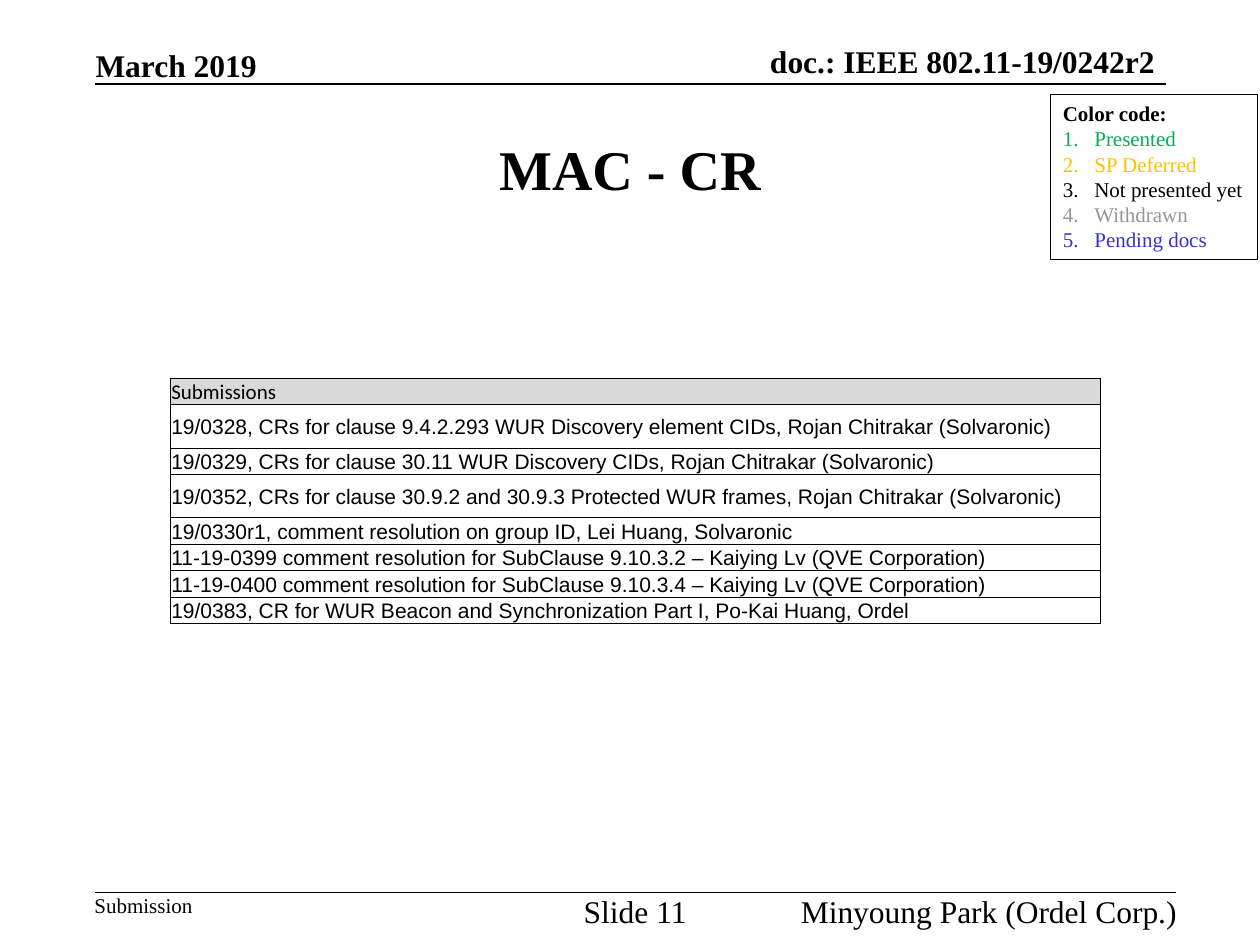
from dataclasses import dataclass

from lxml import etree
from pptx import Presentation
from pptx.dml.color import RGBColor
from pptx.enum.shapes import MSO_CONNECTOR, MSO_SHAPE
from pptx.enum.text import MSO_ANCHOR, PP_ALIGN
from pptx.oxml.ns import qn
from pptx.util import Emu, Inches, Pt

LEFT, MID, RIGHT = PP_ALIGN.LEFT, PP_ALIGN.CENTER, PP_ALIGN.RIGHT
TOP, CENTER, BASE = MSO_ANCHOR.TOP, MSO_ANCHOR.MIDDLE, MSO_ANCHOR.BOTTOM
LINE, RECT = MSO_CONNECTOR.STRAIGHT, MSO_SHAPE.RECTANGLE
SERIF, SANS, HEAD = "Times New Roman", "Arial", "Calibri"
COLORS = {
    "black": "000000", "green": "00B050", "amber": "FFC000",
    "gray": "969696", "blue": "3333CC", "head": "D9D9D9",
}
CELL = Inches(1) // 12  # the grid has 120 columns and 90 rows


@dataclass
class Label:
    text: str
    col: float
    row: float
    cols: float
    rows: float
    size: int = 18
    bold: bool = False
    align: PP_ALIGN = LEFT
    anchor: MSO_ANCHOR = TOP


@dataclass
class Rule:
    row: float
    start: float
    end: float


LABELS = [
    Label("doc.: IEEE 802.11-19/0242r2", 67, 4, 43, 3.6, 18, True, RIGHT, BASE),
    Label("March 2019", 9.1, 4.35, 17.7, 3.6, 18, True, LEFT, BASE),
    Label("Submission", 9, 85, 12, 2.4, 12),
    Label("Slide 11", 54.5, 85, 12, 3.6, 18, False, MID),
    Label("Minyoung Park (Ordel Corp.)", 72, 85, 40.1, 3.6, 18, False, RIGHT),
]
RULES = [Rule(8, 9, 111), Rule(85, 9, 112)]
STATES = [
    ("Presented", "green"), ("SP Deferred", "amber"),
    ("Not presented yet", "black"), ("Withdrawn", "gray"),
    ("Pending docs", "blue"),
]
LOW, TALL = 2.46, 4.14
ITEMS = [
    ("Submissions", LOW),
    ("19/0328, CRs for clause 9.4.2.293 WUR Discovery element CIDs, "
     "Rojan Chitrakar (Solvaronic)", TALL),
    ("19/0329, CRs for clause 30.11 WUR Discovery CIDs, "
     "Rojan Chitrakar (Solvaronic)", LOW),
    ("19/0352, CRs for clause 30.9.2 and 30.9.3 Protected WUR frames, "
     "Rojan Chitrakar (Solvaronic)", TALL),
    ("19/0330r1, comment resolution on group ID, Lei Huang, Solvaronic", LOW),
    ("11-19-0399 comment resolution for SubClause 9.10.3.2 – "
     "Kaiying Lv (QVE Corporation)", LOW),
    ("11-19-0400 comment resolution for SubClause 9.10.3.4 – "
     "Kaiying Lv (QVE Corporation)", LOW),
    ("19/0383, CR for WUR Beacon and Synchronization Part I, "
     "Po-Kai Huang, Ordel", LOW),
]


def grid(*units: float) -> list[Emu]:
    return [Emu(round(unit * CELL)) for unit in units]


def paint(name: str) -> RGBColor:
    return RGBColor.from_string(COLORS[name])


def style(para, size: int, face: str = SERIF, bold: bool = False,
          color: str = "black", align: PP_ALIGN = LEFT) -> None:
    para.alignment = align
    for run in para.runs:
        font = run.font
        font.name, font.size, font.bold = face, Pt(size), bold
        font.color.rgb = paint(color)


def add_label(slide, label: Label) -> None:
    box = slide.shapes.add_textbox(
        *grid(label.col, label.row, label.cols, label.rows))
    frame = box.text_frame
    frame.margin_left = frame.margin_right = 0
    frame.margin_top = frame.margin_bottom = 0
    frame.word_wrap = False
    frame.vertical_anchor = label.anchor
    frame.text = label.text
    style(frame.paragraphs[0], label.size, bold=label.bold, align=label.align)


def add_rule(slide, rule: Rule) -> None:
    line = slide.shapes.add_connector(
        LINE, *grid(rule.start, rule.row, rule.end, rule.row))
    line.line.color.rgb = paint("black")
    line.line.width = Pt(1)
    etree.SubElement(line._element.spPr, qn("a:effectLst"))


def add_title(slide, text: str) -> None:
    title = slide.shapes.title
    title.left, title.top, title.width, title.height = grid(9, 9, 102, 14)
    title.text_frame.text = text
    title.text_frame.vertical_anchor = CENTER
    style(title.text_frame.paragraphs[0], 32, bold=True, align=MID)


def add_key(slide) -> None:
    box = slide.shapes.add_shape(RECT, *grid(100.05, 9, 19.7, 15.75))
    box.shadow.inherit = False
    box.fill.background()
    box.line.color.rgb = paint("black")
    box.line.width = Pt(0.75)
    frame = box.text_frame
    frame.word_wrap = False
    frame.vertical_anchor = TOP
    frame.text = "Color code:"
    style(frame.paragraphs[0], 12, bold=True)
    for text, color in STATES:
        para = frame.add_paragraph()
        para.text = text
        style(para, 12, color=color)
        props = para._p.get_or_add_pPr()
        props.set("marL", str(Inches(0.25)))
        props.set("indent", str(-Inches(0.25)))
        etree.SubElement(props, qn("a:buAutoNum"), type="arabicPeriod")


def add_border(cell) -> None:
    props = cell._tc.get_or_add_tcPr()
    for side in ("lnL", "lnR", "lnT", "lnB"):
        edge = etree.SubElement(props, qn(f"a:{side}"), w=str(Pt(0.5)))
        fill = etree.SubElement(edge, qn("a:solidFill"))
        etree.SubElement(fill, qn("a:srgbClr"), val=COLORS["black"])


def add_list(slide) -> None:
    total = sum(rows for _, rows in ITEMS)
    table = slide.shapes.add_table(
        len(ITEMS), 1, *grid(16.2, 36, 88.56, total)).table
    table.first_row = table.horz_banding = False
    for index, (text, rows) in enumerate(ITEMS):
        table.rows[index].height = grid(rows)[0]
        cell = table.cell(index, 0)
        cell.margin_left = cell.margin_right = cell.margin_top = Inches(0.01)
        cell.margin_bottom = 0
        cell.text_frame.text = text
        add_border(cell)
        if index:
            cell.fill.background()
        else:
            cell.fill.solid()
            cell.fill.fore_color.rgb = paint("head")
        cell.vertical_anchor = CENTER if index else BASE
        style(cell.text_frame.paragraphs[0], 12, SANS if index else HEAD)


def main() -> None:
    deck = Presentation()
    deck.slide_width, deck.slide_height = grid(120, 90)
    slide = deck.slides.add_slide(deck.slide_layouts[5])

    # Header and footer
    for rule in RULES:
        add_rule(slide, rule)
    for label in LABELS:
        add_label(slide, label)

    # Title, color key and submissions
    add_title(slide, "MAC - CR")
    add_key(slide)
    add_list(slide)
    deck.save("out.pptx")


if __name__ == "__main__":
    main()
